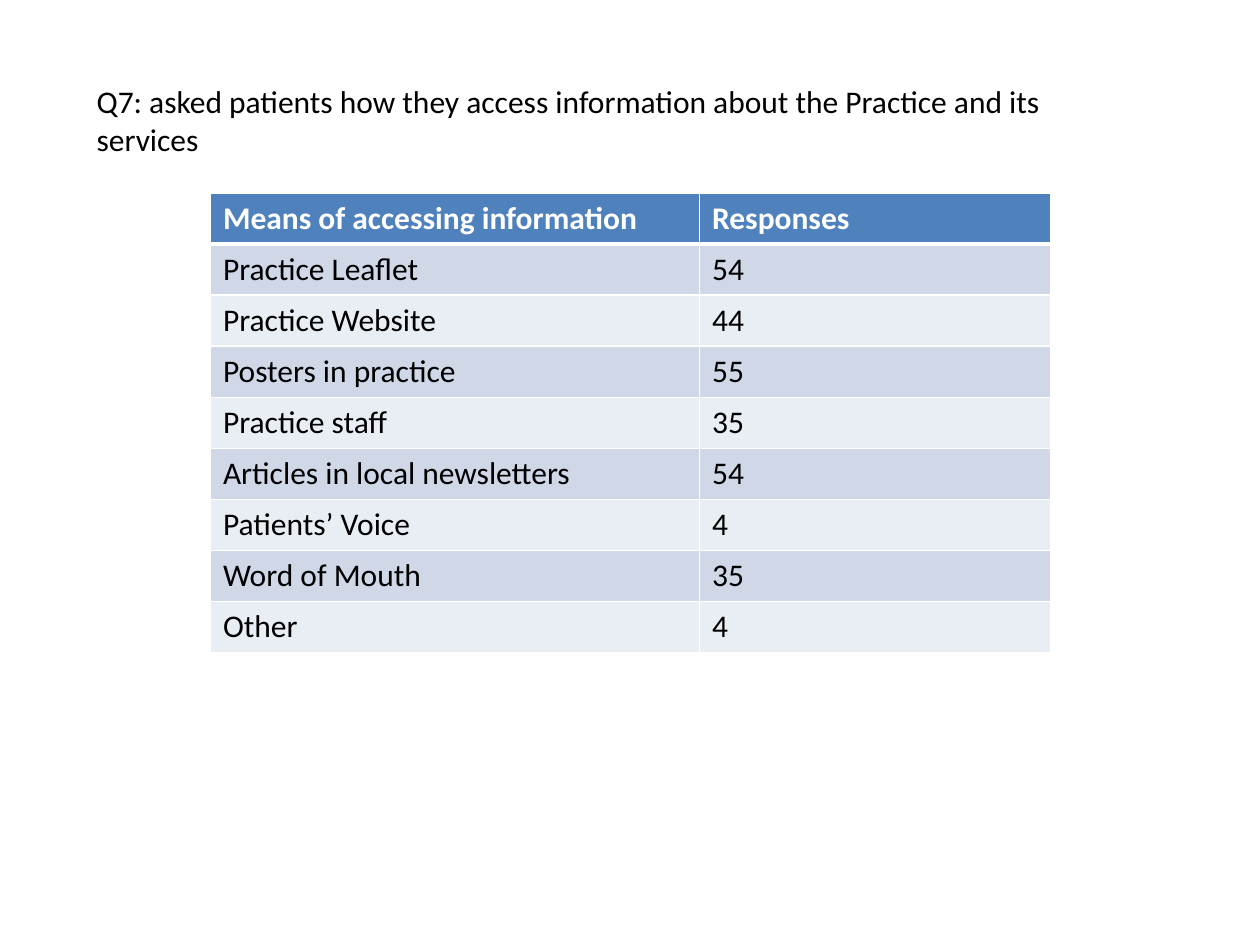
from lxml.etree import SubElement
from pptx import Presentation
from pptx.dml.color import RGBColor
from pptx.enum.text import MSO_ANCHOR, MSO_AUTO_SIZE, PP_ALIGN
from pptx.oxml.ns import qn
from pptx.util import Pt

BLACK = RGBColor(0x00, 0x00, 0x00)
WHITE = RGBColor(0xFF, 0xFF, 0xFF)
HEADER_BLUE = RGBColor(0x4F, 0x81, 0xBD)
BAND_DARK = RGBColor(0xD0, 0xD8, 0xE8)
BAND_LIGHT = RGBColor(0xE9, 0xED, 0xF4)

QUESTION = "Q7: asked patients how they access information about the Practice and its services"
HEADINGS = ("Means of accessing information", "Responses")
RESPONSES = [
    ("Practice Leaflet", 54),
    ("Practice Website", 44),
    ("Posters in practice", 55),
    ("Practice staff", 35),
    ("Articles in local newsletters", 54),
    ("Patients’ Voice", 4),
    ("Word of Mouth", 35),
    ("Other", 4),
]


def write_text(frame, text, *, font, size, color=BLACK, bold=False):
    para = frame.paragraphs[0]
    para.alignment = PP_ALIGN.LEFT
    span = para.add_run()
    span.text = text
    span.font.name = font
    span.font.size = Pt(size)
    span.font.bold = bold
    span.font.color.rgb = color


def set_borders(cell, color, **widths):
    """Draw cell borders; widths are points keyed by side: L, R, T, B."""
    properties = cell._tc.get_or_add_tcPr()
    for index, side in enumerate("LRTB"):
        line = SubElement(properties, qn(f"a:ln{side}"), w=str(Pt(widths[side])))
        fill = SubElement(line, qn("a:solidFill"))
        SubElement(fill, qn("a:srgbClr"), val=str(color))
        properties.insert(index, line)  # borders come before the cell fill


class SlideBuilder:
    """Holds the text style and the page being filled."""

    def __init__(self, deck, font="Calibri", size=18):
        self.font = font
        self.size = size
        self.page = deck.slides.add_slide(deck.slide_layouts[5])

    def title(self, text, left, top, width, height):
        box = self.page.shapes.title
        box.left, box.top, box.width, box.height = map(Pt, (left, top, width, height))
        frame = box.text_frame
        frame.word_wrap = True
        frame.auto_size = MSO_AUTO_SIZE.NONE
        frame.vertical_anchor = MSO_ANCHOR.TOP
        write_text(frame, text, font=self.font, size=self.size)

    def table(self, rows, left, top, column_widths, row_height):
        """Add a banded table whose first row is the header."""
        table = self.page.shapes.add_table(
            len(rows), len(column_widths), Pt(left), Pt(top),
            Pt(sum(column_widths)), Pt(row_height * len(rows))).table
        for column, width in zip(table.columns, column_widths):
            column.width = Pt(width)
        for number, values in enumerate(rows):
            is_header = number == 0
            band = BAND_DARK if number % 2 else BAND_LIGHT
            for column, value in enumerate(values):
                cell = table.cell(number, column)
                cell.fill.solid()
                cell.fill.fore_color.rgb = HEADER_BLUE if is_header else band
                set_borders(cell, WHITE, L=1, R=1,
                            T=3 if number == 1 else 1, B=3 if is_header else 1)
                write_text(cell.text_frame, str(value), font=self.font, size=self.size,
                           color=WHITE if is_header else BLACK, bold=is_header)


def main():
    deck = Presentation()
    deck.slide_width, deck.slide_height = Pt(720), Pt(540)
    builder = SlideBuilder(deck)
    builder.title(QUESTION, 48, 43.2, 561.6, 51)
    builder.table([HEADINGS, *RESPONSES], 120.25, 110.25, (279.5, 200.5), 29.2)
    deck.save("out.pptx")


if __name__ == "__main__":
    main()
